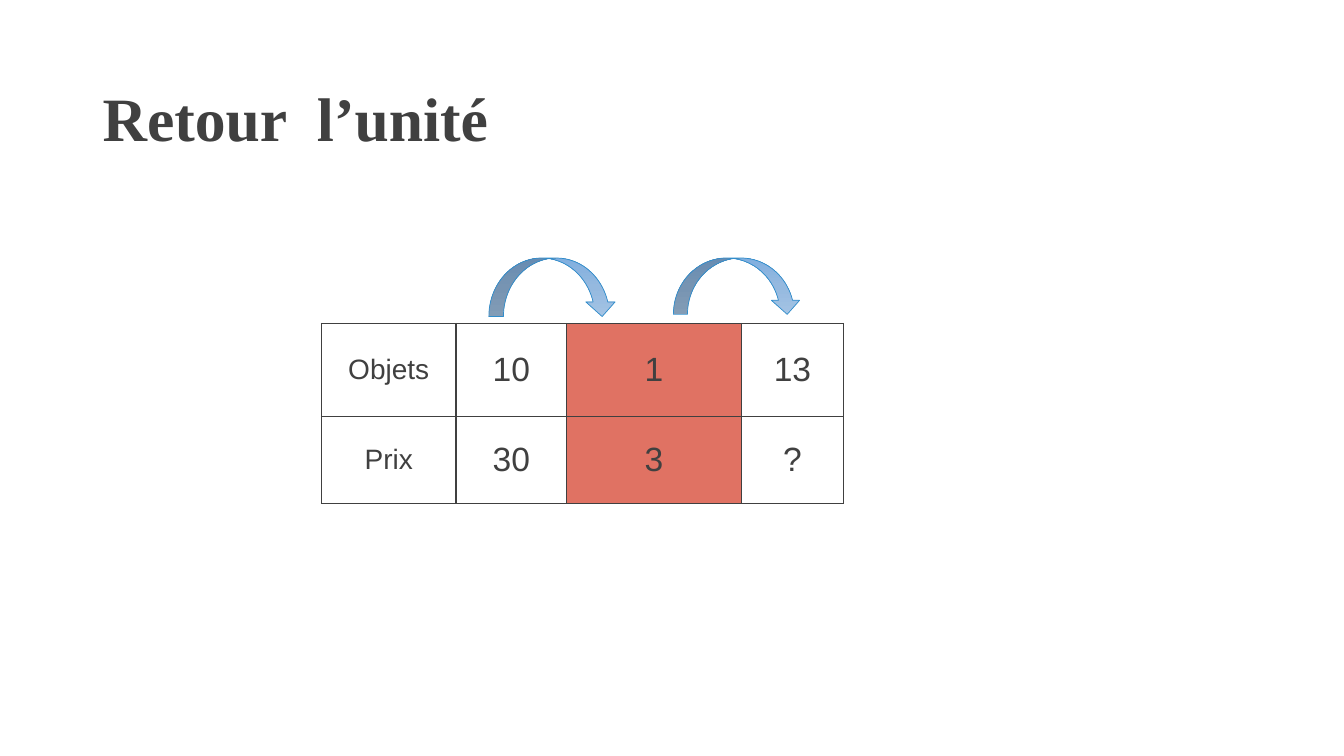
from copy import deepcopy

from lxml.etree import SubElement
from pptx import Presentation
from pptx.dml.color import RGBColor
from pptx.enum.shapes import MSO_SHAPE
from pptx.enum.text import MSO_ANCHOR, PP_ALIGN
from pptx.oxml.ns import qn
from pptx.util import Pt

INK = "404040"
UNIT_COLUMN = 2


def rgb(hex_colour):
    return RGBColor.from_string(hex_colour)


def add_borders(cell, colour, width):
    properties = cell._tc.get_or_add_tcPr()
    for side in ("a:lnL", "a:lnR", "a:lnT", "a:lnB"):
        line = SubElement(properties, qn(side), w=str(width))
        SubElement(SubElement(line, qn("a:solidFill")), qn("a:srgbClr"), val=colour)


presentation = Presentation()
presentation.slide_width, presentation.slide_height = Pt(960), Pt(540)
slide = presentation.slides.add_slide(presentation.slide_layouts[6])

# Title
title = slide.shapes.add_textbox(Pt(66.2), Pt(28.8), Pt(774), Pt(85)).text_frame
title.word_wrap = True
title.vertical_anchor = MSO_ANCHOR.BOTTOM
heading = title.paragraphs[0]
heading.text = "Retour  l’unité"
heading.line_spacing = 0.9
heading.font.name = "Times New Roman"
heading.font.size = Pt(44)
heading.font.bold = True
heading.font.color.rgb = rgb(INK)

# Proportionality table
rows = [("Objets", "10", "1", "13"), ("Prix", "30", "3", "?")]
column_widths = [96, 79.2, 124.5, 73.4]
row_heights = [66.2, 62.6]
prices = slide.shapes.add_table(
    len(rows), len(column_widths), Pt(229.7), Pt(231.1),
    Pt(sum(column_widths)), Pt(sum(row_heights)),
).table
prices.first_row = False
prices.horz_banding = False
for column, width in zip(prices.columns, column_widths):
    column.width = Pt(width)
for row, height in zip(prices.rows, row_heights):
    row.height = Pt(height)

for r, row in enumerate(rows):
    for c, value in enumerate(row):
        cell = prices.cell(r, c)
        add_borders(cell, INK, Pt(1))
        if c == UNIT_COLUMN:
            cell.fill.solid()
            cell.fill.fore_color.rgb = rgb("E07263")
        else:
            cell.fill.background()
        cell.vertical_anchor = MSO_ANCHOR.MIDDLE
        paragraph = cell.text_frame.paragraphs[0]
        paragraph.text = value
        paragraph.alignment = PP_ALIGN.CENTER
        paragraph.font.name = "Arial"
        paragraph.font.size = Pt(20 if c == 0 else 24)
        paragraph.font.color.rgb = rgb(INK)

# Arrows to the unit and on to the unknown
for left, height in [(349.2, 41.8), (481, 40.3)]:
    arrow = slide.shapes.add_shape(
        MSO_SHAPE.CURVED_UP_ARROW, Pt(left), Pt(184.3), Pt(91.4), Pt(height)
    )
    arrow.shadow.inherit = False
    arrow._element.spPr.xfrm.set("flipV", "1")
    arrow.fill.gradient()
    arrow.fill.gradient_angle = 270
    stop_list = arrow._element.spPr.find(qn("a:gradFill")).find(qn("a:gsLst"))
    stop_list.insert(1, deepcopy(stop_list[0]))
    stops = [(0, "A3C3E4"), (0.5, "95B9DF"), (1, "81AFDF")]
    for stop, (position, colour) in zip(arrow.fill.gradient_stops, stops):
        stop.position = position
        stop.color.rgb = rgb(colour)
    arrow.line.color.rgb = rgb("318DCB")
    arrow.line.width = Pt(0.5)

presentation.save("out.pptx")
